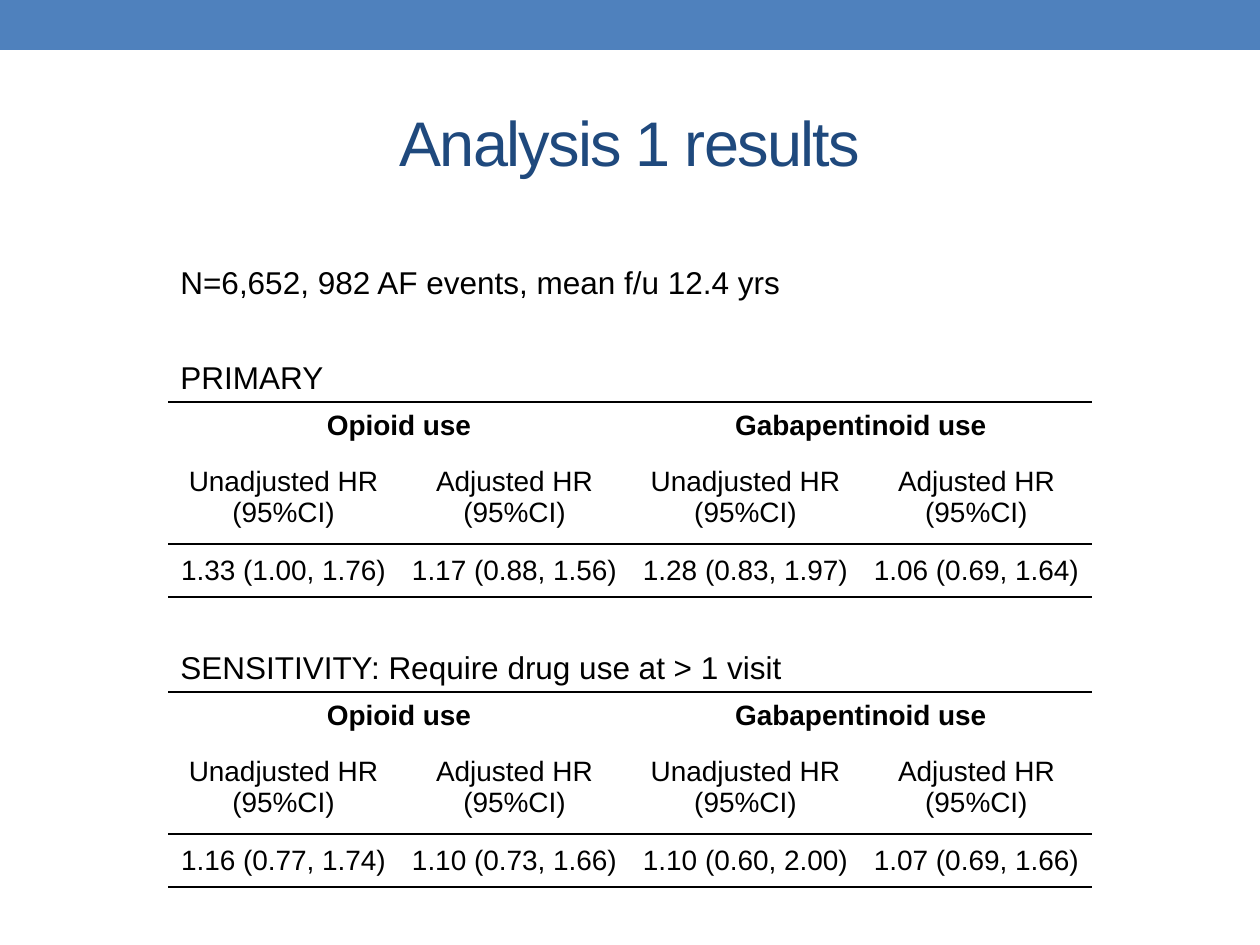
from lxml import etree
from pptx import Presentation
from pptx import util as u
from pptx.dml.color import RGBColor
from pptx.enum import shapes, text
from pptx.oxml.ns import qn

PX_PER_INCH = 126
LEFT, COLUMN_WIDTH = 168, 231
ROW_HEIGHTS = (48, 94, 53)
LABEL_HEIGHT = 50
PLAIN_TABLE_STYLE = "{2D5ABB26-0587-4C30-8999-92F81FD0307C}"

SECTIONS = [
    ("PRIMARY", 352,
     ["1.33 (1.00, 1.76)", "1.17 (0.88, 1.56)", "1.28 (0.83, 1.97)", "1.06 (0.69, 1.64)"]),
    ("SENSITIVITY: Require drug use at > 1 visit", 642,
     ["1.16 (0.77, 1.74)", "1.10 (0.73, 1.66)", "1.10 (0.60, 2.00)", "1.07 (0.69, 1.66)"]),
]
GROUPS = ["Opioid use", "Gabapentinoid use"]
MEASURES = ["Unadjusted HR\n(95%CI)", "Adjusted HR\n(95%CI)"] * len(GROUPS)


def px(length):
    return u.Emu(round(length * 914400 / PX_PER_INCH))


def color(hex_string):
    return RGBColor.from_string(hex_string)


def write(frame, content, size=18, hex_color="000000", bold=False,
          align=text.PP_ALIGN.LEFT, spacing=None):
    """Fill a text frame, one paragraph per line of content."""
    for index, line in enumerate(content.split("\n")):
        paragraph = frame.add_paragraph() if index else frame.paragraphs[0]
        paragraph.alignment = align
        run = paragraph.add_run()
        run.text = line
        run.font.name = "Arial"
        run.font.size = u.Pt(size)
        run.font.bold = bold
        run.font.color.rgb = color(hex_color)
        if spacing is not None:
            run.font._element.set("spc", str(spacing))


def add_band(slide, left, top, width, height):
    band = slide.shapes.add_shape(
        shapes.MSO_SHAPE.RECTANGLE, px(left), px(top), px(width), px(height))
    band.shadow.inherit = False
    band.fill.solid()
    band.fill.fore_color.rgb = color("4F81BD")
    band.line.fill.background()


def place_title(slide, left, top, width, height):
    title = slide.shapes.title
    title.left, title.top, title.width, title.height = map(px, (left, top, width, height))
    title.text_frame.vertical_anchor = text.MSO_ANCHOR.MIDDLE
    write(title.text_frame, "Analysis 1 results", size=36, hex_color="1F497D",
          align=text.PP_ALIGN.CENTER, spacing=-100)


def add_label(slide, content, left, top, width):
    box = slide.shapes.add_textbox(px(left), px(top), px(width), px(LABEL_HEIGHT))
    box.text_frame.word_wrap = True
    write(box.text_frame, content)


def add_border(cell, side):
    """Draw a 1 pt black line on side T or B of a cell."""
    properties = cell._tc.get_or_add_tcPr()
    line = etree.SubElement(properties, qn(f"a:ln{side}"), w=str(u.Pt(1)))
    fill = etree.SubElement(line, qn("a:solidFill"))
    etree.SubElement(fill, qn("a:srgbClr"), val="000000")


def format_cell(cell, content, borders="", bold=False):
    for side in borders:
        add_border(cell, side)
    cell.fill.background()
    cell.vertical_anchor = text.MSO_ANCHOR.MIDDLE
    cell.margin_left = cell.margin_right = px(9)
    cell.margin_top = cell.margin_bottom = 0
    if content:
        write(cell.text_frame, content, size=16, bold=bold, align=text.PP_ALIGN.CENTER)


def add_results_table(slide, values, left, top, width):
    columns = len(values)
    table = slide.shapes.add_table(
        len(ROW_HEIGHTS), columns, px(left), px(top), px(width), px(sum(ROW_HEIGHTS))).table
    table.first_row = table.horz_banding = False
    table._tbl.tblPr.find(qn("a:tableStyleId")).text = PLAIN_TABLE_STYLE
    for row, height in zip(table.rows, ROW_HEIGHTS):
        row.height = px(height)
    for column in table.columns:
        column.width = px(width / columns)

    for index in range(columns):
        group = "" if index % 2 else GROUPS[index // 2]
        format_cell(table.cell(0, index), group, borders="T", bold=True)
        format_cell(table.cell(1, index), MEASURES[index], borders="B")
        format_cell(table.cell(2, index), values[index], borders="TB")
    for index in range(0, columns, 2):
        table.cell(0, index).merge(table.cell(0, index + 1))


def add_section(slide, heading, values, left, top, width):
    add_results_table(slide, values, left, top + LABEL_HEIGHT, width)
    add_label(slide, heading, left, top, width)


def main():
    presentation = Presentation()
    presentation.slide_width, presentation.slide_height = px(1260), px(945)
    slide = presentation.slides.add_slide(presentation.slide_layouts[5])
    width = COLUMN_WIDTH * len(MEASURES)

    add_band(slide, 0, 0, 1260, 50)
    place_title(slide, 63, 73, 1134, 136)
    add_label(slide, "N=6,652, 982 AF events, mean f/u 12.4 yrs", LEFT, 257, 714)
    for heading, top, values in SECTIONS:
        add_section(slide, heading, values, LEFT, top, width)

    presentation.save("out.pptx")


if __name__ == "__main__":
    main()
